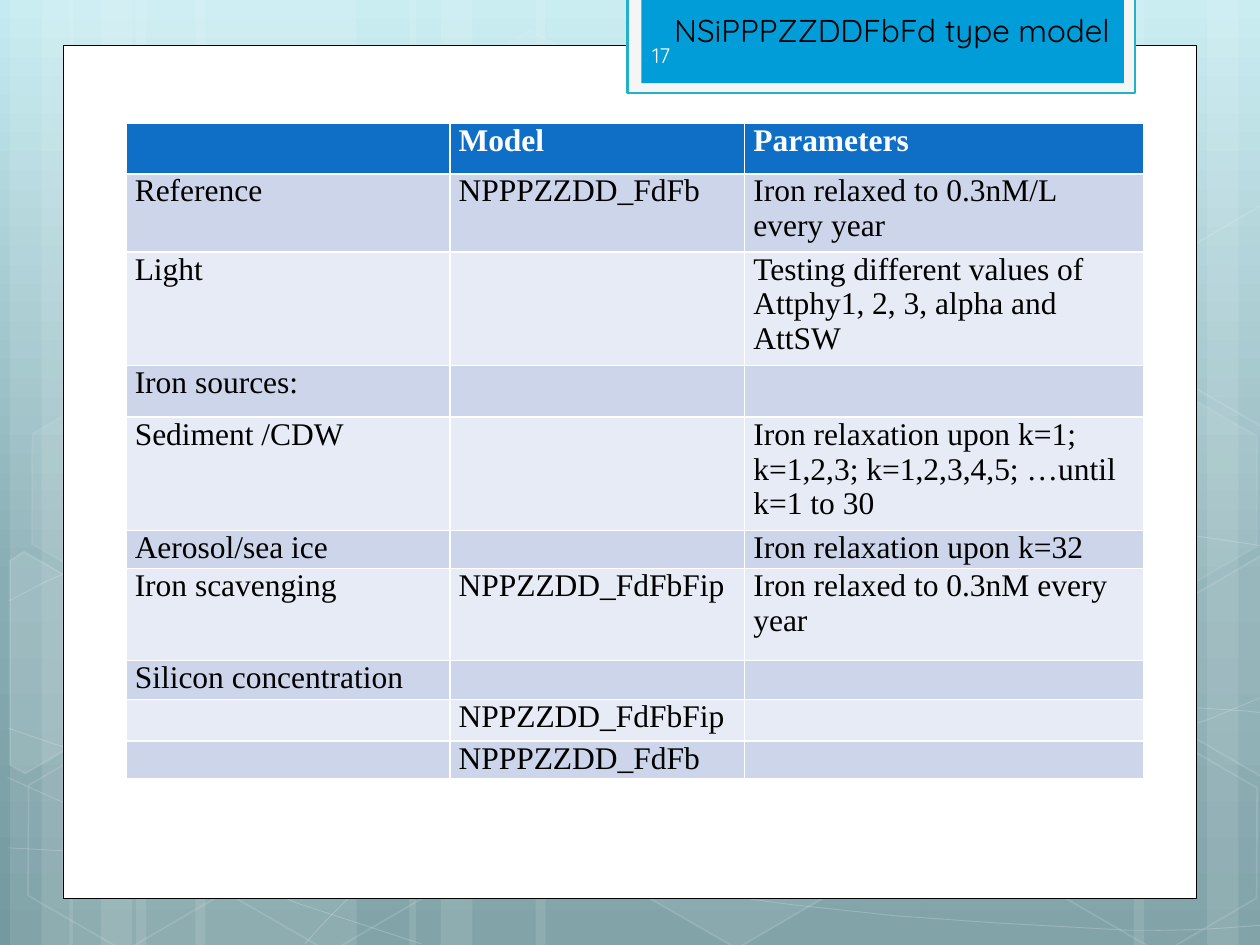
"""Build the slide listing the model runs and their iron, light and silicon parameters."""
from copy import deepcopy

from lxml.etree import SubElement
from pptx import Presentation
from pptx.dml.color import RGBColor
from pptx.enum.shapes import MSO_SHAPE
from pptx.enum.text import MSO_ANCHOR, MSO_AUTO_SIZE, PP_ALIGN
from pptx.oxml.ns import qn
from pptx.util import Inches, Pt

WHITE = RGBColor(0xFF, 0xFF, 0xFF)
BLACK = RGBColor(0, 0, 0)
NUMBER = RGBColor(0xFE, 0xFE, 0xFE)
TAB = RGBColor(0x00, 0x9D, 0xD9)
TAB_EDGE = RGBColor(0x21, 0xB2, 0xC9)
TAB_FRAME = RGBColor(0xF5, 0xF5, 0xF5)
HEADER = RGBColor(0x0F, 0x6F, 0xC6)
BANDS = [RGBColor(0xE7, 0xEB, 0xF5), RGBColor(0xCC, 0xD5, 0xEA)]
SKY = [(0, RGBColor(0xC4, 0xEB, 0xF1)), (0.62, RGBColor(0x88, 0xAD, 0xB3)),
       (1, RGBColor(0x74, 0x9A, 0xA0))]

W, H = 10, 7.5
TITLE = "NSiPPPZZDDFbFd type model"
PAGE = "17"
COLS = [2.57, 2.34, 3.17]
ROWS = [
    (0.4, "", "Model", "Parameters"),
    (0.62, "Reference", "NPPPZZDD_FdFb", "Iron relaxed to 0.3nM/L every year"),
    (0.9, "Light", "", "Testing different values of Attphy1, 2, 3, alpha and AttSW"),
    (0.41, "Iron sources:", "", ""),
    (0.9, "Sediment /CDW", "",
     "Iron relaxation upon k=1; k=1,2,3; k=1,2,3,4,5; …until k=1 to 30"),
    (0.3, "Aerosol/sea ice", "", "Iron relaxation upon k=32"),
    (0.73, "Iron scavenging", "NPPZZDD_FdFbFip", "Iron relaxed to 0.3nM every year"),
    (0.31, "Silicon concentration", "", ""),
    (0.33, "", "NPPZZDD_FdFbFip", ""),
    (0.3, "", "NPPPZZDD_FdFb", ""),
]
STRIPS = [(1.08, 1.75), (0.08, 0.5), (0.33, 0.83), (1.55, 1.75), (0.55, 0.5), (0.8, 0.83),
          (7.33, 1.75), (9.58, 0.5), (9, 0.83), (4.25, 3.08), (3.25, 0.5), (3.5, 0.83)]
CURVES = [
    [(0.07, 6.73), (0.61, 6.76), (1.15, 6.79), (1.9, 6.78), (2.65, 6.77), (3.58, 6.75),
     (4.58, 6.65), (5.58, 6.55), (7, 6.36), (7.92, 6.17), (8.83, 5.98), (9.77, 5.68),
     (10.07, 5.51)],
    [(0.07, 4.77), (0.36, 4.61), (0.65, 4.46), (1.21, 4.31), (1.78, 4.16), (2.59, 3.94),
     (3.47, 3.87), (4.36, 3.8), (5.44, 3.79), (6.54, 3.87), (7.64, 3.95), (9.47, 4.26),
     (10.07, 4.34)],
    [(0.06, 6.17), (1.27, 6.72), (2.47, 7.27), (3.34, 7.49)],
    [(0.07, 5.78), (0.38, 5.89), (0.7, 6), (1.28, 6.16), (1.86, 6.31), (2.73, 6.56),
     (3.57, 6.73), (4.4, 6.9), (5.45, 7.08), (6.28, 7.18), (7.11, 7.29), (8, 7.33),
     (8.53, 7.36), (9.05, 7.4), (9.19, 7.38), (9.45, 7.38), (9.71, 7.37), (9.89, 7.35),
     (10.07, 7.34)],
    [(2.42, 7.49), (2.6, 7.29), (2.78, 7.09), (3.02, 6.91), (3.26, 6.73), (3.6, 6.53),
     (3.88, 6.39), (4.16, 6.25), (4.33, 6.19), (4.7, 6.09), (5.06, 5.99), (5.73, 5.85),
     (6.08, 5.78), (6.44, 5.71), (6.49, 5.71), (6.8, 5.69), (7.11, 5.66), (7.6, 5.63),
     (7.94, 5.62), (8.47, 5.61), (9, 5.62), (9.53, 5.62), (9.71, 5.63), (9.88, 5.64),
     (10.06, 5.66)],
]
HEXAGONS = [(3.34, 0.36, 4, 8), (4.97, 5.89, 6, 12), (0.11, 5.91, 0, 12), (0.14, 3.12, 7, 8),
            (1.74, 5.92, 0, 12), (7.53, 4.53, 10, 12), (8.34, 5.93, 0, 12), (8.34, 3.14, 7, 8)]
CUT_HEXAGONS = [
    (10, [(0.08, 4.45), (0.19, 4.38), (0.96, 4.82), (0.95, 5.7), (0.2, 6.14), (0.08, 6.07)]),
    (4, [(9.26, 4.85), (10.01, 4.41), (10.09, 4.46), (10.09, 6.13), (10.02, 6.17), (9.26, 5.73)]),
    (0, [(9.26, 2.07), (10.01, 1.63), (10.1, 1.68), (10.09, 3.35), (10.02, 3.39), (9.26, 2.95)]),
]


def set_alpha(fill_element, percent):
    color = fill_element.find(".//" + qn("a:srgbClr"))
    SubElement(color, qn("a:alpha")).set("val", str(percent * 1000))


def paint(sp, fill=None, alpha=100, line=None, width=1, line_alpha=100):
    sp.shadow.inherit = False
    if fill is None or alpha == 0:
        sp.fill.background()
    else:
        sp.fill.solid()
        sp.fill.fore_color.rgb = fill
        if alpha < 100:
            set_alpha(sp.element.spPr.find(qn("a:solidFill")), alpha)
    if line is None:
        sp.line.fill.background()
    else:
        sp.line.color.rgb = line
        sp.line.width = Pt(width)
        if line_alpha < 100:
            set_alpha(sp.element.spPr.find(qn("a:ln")), line_alpha)


def add_box(s, x, y, w, h, kind=MSO_SHAPE.RECTANGLE, **look):
    sp = s.shapes.add_shape(kind, Inches(x), Inches(y), Inches(w), Inches(h))
    paint(sp, **look)
    return sp


def add_outline(s, points, close, **look):
    pts = [(Inches(x), Inches(y)) for x, y in points]
    fb = s.shapes.build_freeform(*pts[0])
    fb.add_line_segments(pts[1:], close=close)
    paint(fb.convert_to_shape(), **look)


def trace(knots, steps=3):
    points = [knots[0]]
    for i in range(0, len(knots) - 1, 3):
        for t in (n / steps for n in range(1, steps + 1)):
            shares = ((1 - t) ** 3, 3 * t * (1 - t) ** 2, 3 * t * t * (1 - t), t ** 3)
            points.append(tuple(sum(k * v[axis] for k, v in zip(shares, knots[i:i + 4]))
                                for axis in (0, 1)))
    return points


def write(tf, text, font="Times New Roman", size=18, color=BLACK, bold=False):
    p = tf.paragraphs[0]
    p.alignment = PP_ALIGN.LEFT
    r = p.add_run()
    r.text = text
    r.font.name, r.font.size, r.font.bold = font, Pt(size), bold
    r.font.color.rgb = color


def add_backdrop(s):
    fill = s.background.fill
    fill.gradient()
    fill.gradient_angle = 270
    stops = s.element.find(".//" + qn("a:gsLst"))
    stops.append(deepcopy(stops[0]))
    for stop, (position, color) in zip(fill.gradient_stops, SKY):
        stop.position, stop.color.rgb = position, color
    for x, w in STRIPS:
        add_box(s, x, 0, w, H, fill=WHITE, alpha=10)
    for knots in CURVES:
        add_outline(s, trace(knots), False, line=WHITE, width=0.5, line_alpha=20)
    for x, y, alpha, line_alpha in HEXAGONS:
        sp = add_box(s, x, y, 1.75, 1.52, MSO_SHAPE.HEXAGON, fill=WHITE, alpha=alpha,
                     line=WHITE, line_alpha=line_alpha)
        sp.rotation = 30
        sp.adjustments[0], sp.adjustments[1] = 0.285, 1.155
    for alpha, points in CUT_HEXAGONS:
        add_outline(s, points, True, fill=WHITE, alpha=alpha, line=WHITE, line_alpha=12)
    add_box(s, 0.5, 0.36, 9, 6.77, fill=WHITE, line=BLACK, width=0.5)
    add_box(s, 4.98, -0.02, 4.03, 0.76, fill=TAB_FRAME, line=TAB_EDGE, width=1.25)
    add_box(s, 5.09, -0.02, 3.83, 0.68, fill=TAB)


def add_heading(s):
    number = s.shapes.add_textbox(Inches(5.08), Inches(0.24), Inches(1.46), Inches(0.4))
    number.text_frame.word_wrap = True
    number.text_frame.vertical_anchor = MSO_ANCHOR.MIDDLE
    write(number.text_frame, PAGE, font="Quicksand", size=12, color=NUMBER)
    title = s.shapes.title
    title.left, title.top, title.width, title.height = map(Inches, (5.25, 0.04, 3.71, 0.4))
    tf = title.text_frame
    tf.word_wrap, tf.auto_size = False, MSO_AUTO_SIZE.SHAPE_TO_FIT_TEXT
    tf.vertical_anchor = MSO_ANCHOR.TOP
    write(tf, TITLE, font="Quicksand")
    title.element.getparent().append(title.element)


def add_runs_table(s):
    height = sum(row[0] for row in ROWS)
    table = s.shapes.add_table(len(ROWS), len(COLS), Inches(1), Inches(0.98),
                               Inches(sum(COLS)), Inches(height)).table
    for column, w in zip(table.columns, COLS):
        column.width = Inches(w)
    for i, (h, *texts) in enumerate(ROWS):
        table.rows[i].height = Inches(h)
        for j, text in enumerate(texts):
            cell = table.cell(i, j)
            cell.margin_left, cell.margin_right = Inches(0.07), Inches(0.12)
            cell.margin_top = cell.margin_bottom = 0
            cell.fill.solid()
            cell.fill.fore_color.rgb = BANDS[i % 2] if i else HEADER
            if text:
                write(cell.text_frame, text, color=BLACK if i else WHITE, bold=i == 0)


def main():
    prs = Presentation()
    prs.slide_width, prs.slide_height = Inches(W), Inches(H)
    s = prs.slides.add_slide(prs.slide_layouts[5])
    add_backdrop(s)
    add_heading(s)
    add_runs_table(s)
    prs.save("out.pptx")


if __name__ == "__main__":
    main()
